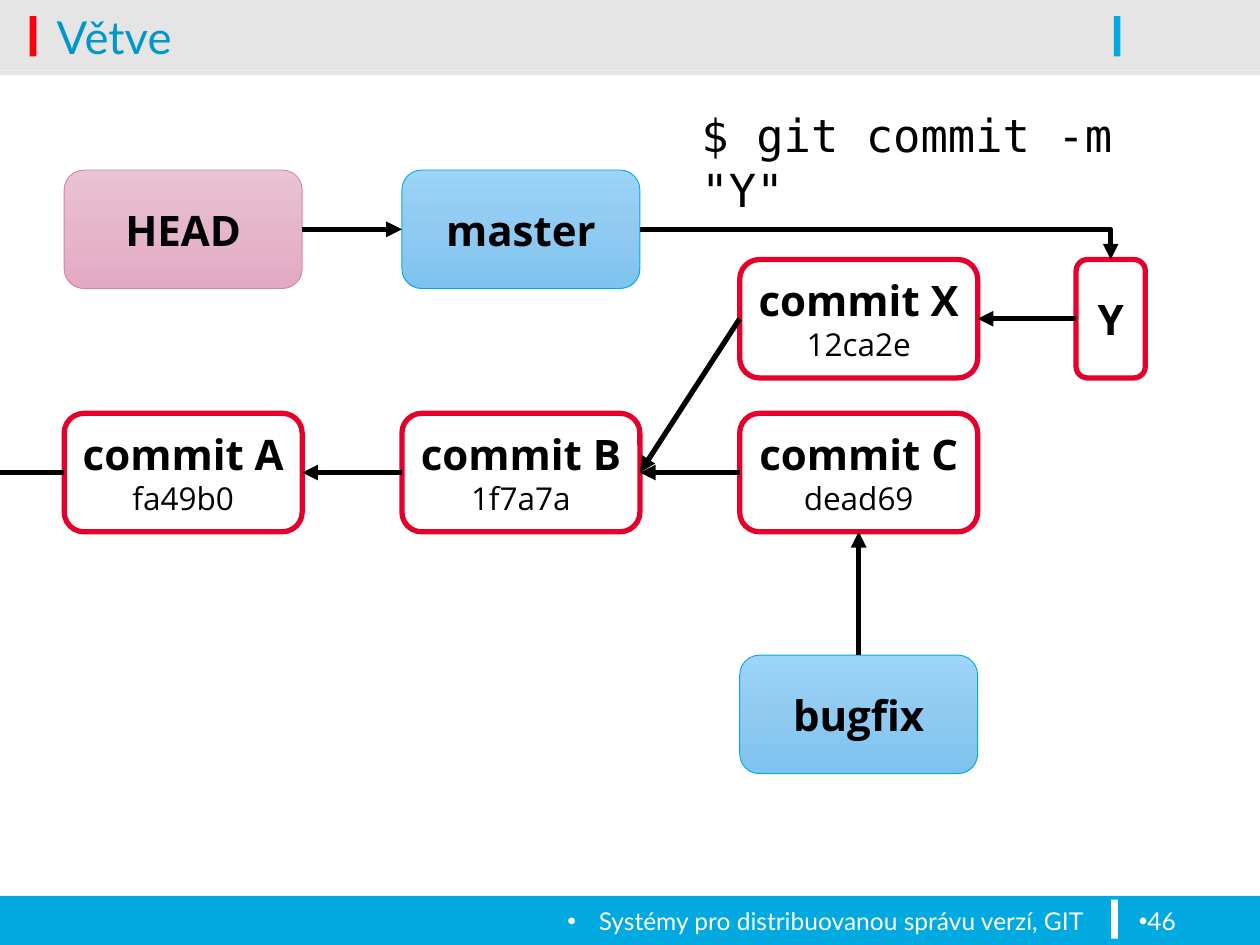
from copy import deepcopy
from pptx import Presentation
from pptx.dml.color import RGBColor
from pptx.enum import shapes, text
from pptx.oxml import ns, xmlchemy
from pptx.util import Pt

COLORS = {
    "black": "000000", "white": "FFFFFF", "blue": "00A9E0",
    "red": "FE000C", "commit": "E4002B", "head": "D582A9",
}
GRADIENTS = {
    "blue": ("9DD4F9", "90CAF1", "7CC3EF"),
    "head": ("EAC3D4", "E5B6CA", "E4AAC3"),
}
TOP, LEFT, BOTTOM, RIGHT = range(4)
NODE_WIDTH, NODE_HEIGHT = 136, 67.7


def color(name):
    return RGBColor.from_string(COLORS[name])


def add_element(parent, tag, **attributes):
    element = xmlchemy.OxmlElement(tag)
    for name, value in attributes.items():
        element.set(name, str(value))
    parent.append(element)
    return element


def add_span(para, words, size, font, name, bold=False):
    span = para.add_run()
    span.text = words
    span.font.size = Pt(size)
    span.font.name = font
    span.font.bold = bold
    span.font.color.rgb = color(name)


def add_box(page, kind, box, fill=None):
    shape = page.shapes.add_shape(kind, *map(Pt, box))
    shape.shadow.inherit = False
    if fill:
        shape.fill.solid()
        shape.fill.fore_color.rgb = color(fill)
    return shape


def add_bar(page, box, fill, opacity=100):
    bar = add_box(page, shapes.MSO_SHAPE.RECTANGLE, box, fill)
    bar.line.fill.background()
    if opacity < 100:
        tone = bar._element.spPr.find(".//" + ns.qn("a:srgbClr"))
        add_element(tone, "a:alpha", val=opacity * 1000)


def add_text(page, box, words, size, font, name, align=text.PP_ALIGN.LEFT, hang=None):
    area = page.shapes.add_textbox(*map(Pt, box))
    area.text_frame.word_wrap = True
    para = area.text_frame.paragraphs[0]
    para.alignment = align
    if hang is not None:
        props = para._p.get_or_add_pPr()
        props.set("marL", str(Pt(hang)))
        props.set("indent", str(-Pt(hang)))
        add_element(add_element(props, "a:buClr"), "a:srgbClr", val=COLORS[name])
        add_element(props, "a:buFont", typeface="Arial")
        add_element(props, "a:buChar", char="•")
    add_span(para, words, size, font, name)


def add_header(page, box, title):
    left, top, width, height = box
    add_bar(page, (left, top + 40.3, width, height - 40.3), "black", 10)
    add_bar(page, (left, top, width, 40.3), "black", 10)
    add_bar(page, (left + 17, top + 9.2, 3.8, 23), "red")
    add_bar(page, (left + 636.5, top + 9.2, 3.8, 23), "blue")
    holder = page.shapes.title
    holder.left, holder.top = Pt(left + 25.2), Pt(top - 7.9)
    holder.width, holder.height = Pt(606), Pt(56.9)
    holder.text_frame.vertical_anchor = text.MSO_ANCHOR.MIDDLE
    para = holder.text_frame.paragraphs[0]
    para.alignment = text.PP_ALIGN.LEFT
    add_span(para, title, 26, "Lato", "blue")


def add_footer(page, box, words, number):
    left, top, width, height = box
    add_bar(page, box, "blue")
    add_bar(page, (left + 635, top + 2.2, 3.8, 22.3), "white")
    add_text(page, (left + 8.6, top + 2.2, 617.8, 25.9), words, 14, "Lato", "white",
             text.PP_ALIGN.RIGHT, 18)
    add_text(page, (left + 643.7, top + 2.2, 64.8, 25.9), number, 14, "Lato", "white", hang=0)


def add_node(page, box, label, style, digest=None):
    node = add_box(page, shapes.MSO_SHAPE.ROUNDED_RECTANGLE, box)
    if style in GRADIENTS:
        node.fill.gradient()
        node.fill.gradient_angle = 270
        stops = node._element.spPr.find(".//" + ns.qn("a:gsLst"))
        middle = deepcopy(stops[0])
        middle.set("pos", "50000")
        stops.insert(1, middle)
        for stop, tone in zip(node.fill.gradient_stops, GRADIENTS[style]):
            stop.color.rgb = RGBColor.from_string(tone)
    else:
        node.fill.solid()
        node.fill.fore_color.rgb = color("white")
    node.line.color.rgb = color(style)
    node.line.width = Pt(0.5 if style in GRADIENTS else 3)
    frame = node.text_frame
    frame.word_wrap = True
    frame.margin_left = frame.margin_right = 0
    frame.vertical_anchor = text.MSO_ANCHOR.MIDDLE
    para = frame.paragraphs[0]
    para.alignment = text.PP_ALIGN.CENTER
    add_span(para, label, 24, "Open Sans", "black", True)
    if digest:
        para.add_line_break()
        add_span(para, digest, 18, "Open Sans", "black")
    return node


def add_arrow(page, kind=shapes.MSO_CONNECTOR.STRAIGHT, ends=(0, 0, 0, 0)):
    arrow = page.shapes.add_connector(kind, *map(Pt, ends))
    arrow.line.color.rgb = color("black")
    arrow.line.width = Pt(3)
    add_element(arrow.line._get_or_add_ln(), "a:tailEnd", type="triangle")
    add_element(arrow._element.spPr, "a:effectLst")
    return arrow


def add_history(page, box):
    left, top, _, _ = box
    columns = [left + 193 * index for index in range(3)]
    rows = {"refs": top, "feature": top + 51.1, "main": top + 139, "fix": top + 277.2}
    layout = {
        "HEAD": (0, "refs", "head", None),
        "master": (1, "refs", "blue", None),
        "commit X": (2, "feature", "commit", "12ca2e"),
        "commit A": (0, "main", "commit", "fa49b0"),
        "commit B": (1, "main", "commit", "1f7a7a"),
        "commit C": (2, "main", "commit", "dead69"),
        "bugfix": (2, "fix", "blue", None),
    }
    nodes = {
        label: add_node(page, (columns[column], rows[row], NODE_WIDTH, NODE_HEIGHT),
                        label, style, digest)
        for label, (column, row, style, digest) in layout.items()
    }
    latest = (left + 578.2, rows["feature"], 39.6, NODE_HEIGHT)
    nodes["Y"] = add_node(page, latest, "Y", "commit")
    for source, start, target, end in (
        ("HEAD", RIGHT, "master", LEFT),
        ("Y", LEFT, "commit X", RIGHT),
        ("commit X", LEFT, "commit B", RIGHT),
        ("commit C", LEFT, "commit B", RIGHT),
        ("commit B", LEFT, "commit A", RIGHT),
        ("bugfix", TOP, "commit C", BOTTOM),
    ):
        arrow = add_arrow(page)
        arrow.begin_connect(nodes[source], start)
        arrow.end_connect(nodes[target], end)
    middle = rows["main"] + NODE_HEIGHT / 2
    add_arrow(page, ends=(left, middle, left - 57, middle))
    bend = add_arrow(page, shapes.MSO_CONNECTOR.ELBOW)
    bend.begin_connect(nodes["master"], RIGHT)
    bend.end_connect(nodes["Y"], TOP)
    bend._element.spPr.find(ns.qn("a:prstGeom")).set("prst", "bentConnector2")


def main():
    deck = Presentation()
    deck.slide_width, deck.slide_height = Pt(720), Pt(540)
    page = deck.slides.add_slide(deck.slide_layouts[5])
    add_header(page, (0, 0, 720, 43), "Větve")
    add_footer(page, (0, 511.9, 720, 28.1), "Systémy pro distribuovanou správu verzí, GIT", "46")
    add_text(page, (393.8, 57.6, 288, 38.9), '$ git commit -m "Y"', 26,
             "DejaVu Sans Mono", "black")
    add_history(page, (36.7, 97.2, 617.8, 344.9))
    deck.save("out.pptx")


if __name__ == "__main__":
    main()
